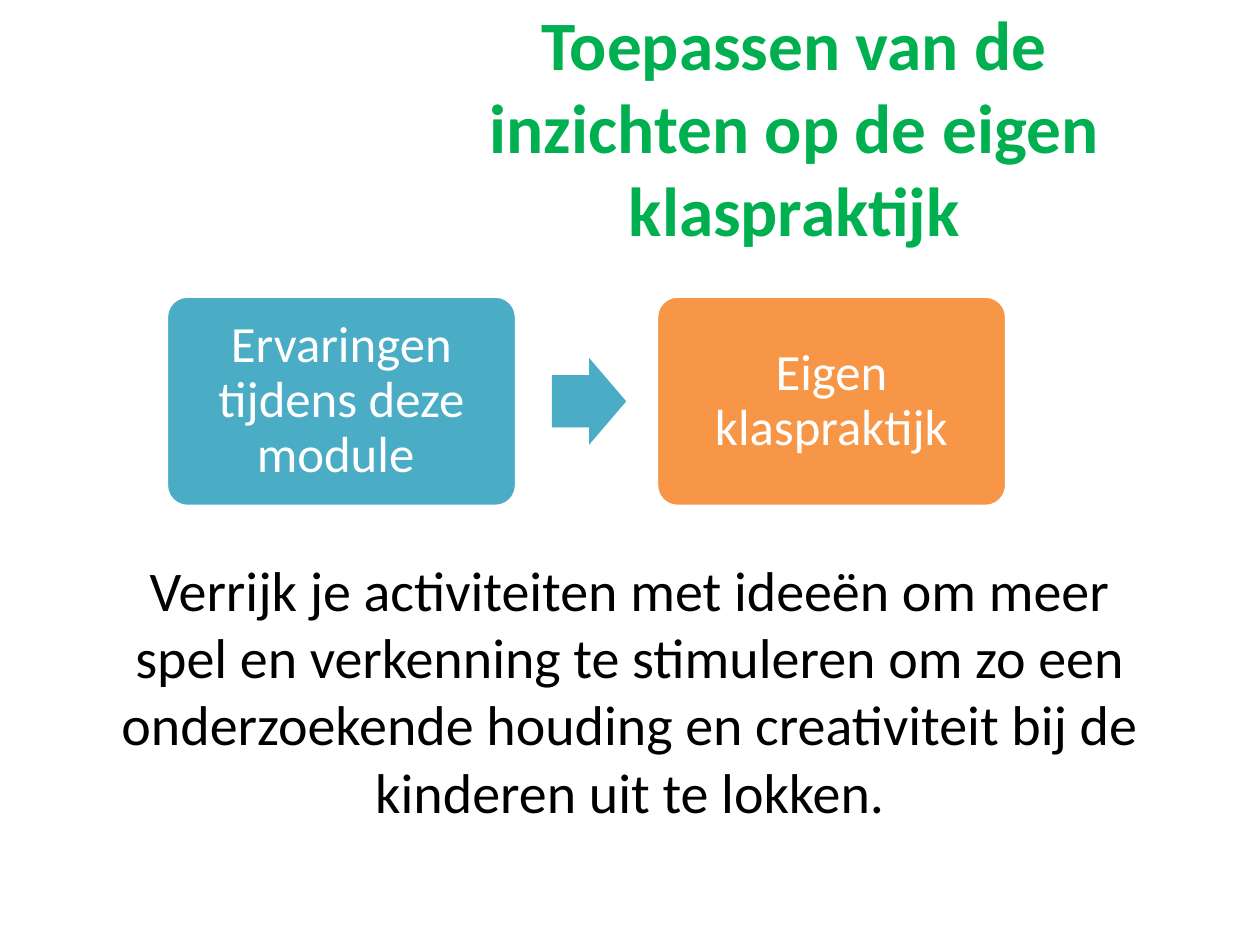
import pptx
import pptx.util
import pptx.dml.color
import pptx.enum.shapes
import pptx.enum.text

Inches = pptx.util.Inches
Pt = pptx.util.Pt
MSO_SHAPE = pptx.enum.shapes.MSO_SHAPE
ANCHOR = pptx.enum.text.MSO_ANCHOR

TEAL, ORANGE, GREEN = "4BACC6", "F79646", "00B050"
WHITE, BLACK = "FFFFFF", "000000"


def rgb(color):
    return pptx.dml.color.RGBColor.from_string(color)


def write(sp, text, size, color, anchor, bold=False):
    """Fill a shape with one centred, wrapped paragraph and return it."""
    tf = sp.text_frame
    tf.word_wrap = True
    tf.vertical_anchor = anchor
    p = tf.paragraphs[0]
    p.alignment = pptx.enum.text.PP_ALIGN.CENTER
    r = p.add_run()
    r.text = text
    r.font.name = "Calibri"
    r.font.size = Pt(size)
    r.font.bold = bold
    r.font.color.rgb = rgb(color)
    return p


prs = pptx.Presentation()
prs.slide_width, prs.slide_height = Inches(10), Inches(7.5)
s = prs.slides.add_slide(prs.slide_layouts[6])

title = s.shapes.add_textbox(Inches(3.11), Inches(0.3), Inches(6.39), Inches(1.4))
write(title, "Toepassen van de inzichten op de eigen klaspraktijk",
      39.6, GREEN, ANCHOR.MIDDLE, bold=True)

body = s.shapes.add_textbox(Inches(0.69), Inches(4.36), Inches(8.62), Inches(2.83))
write(body, "Verrijk je activiteiten met ideeën om meer spel en verkenning te "
      "stimuleren om zo een onderzoekende houding en creativiteit bij de "
      "kinderen uit te lokken.", 32, BLACK, ANCHOR.TOP)

# Process: two steps with an arrow between them
steps = [(1.32, TEAL, "Ervaringen tijdens deze module "),
         (5.21, ORANGE, "Eigen klaspraktijk")]
for left, color, text in steps:
    sp = s.shapes.add_shape(MSO_SHAPE.ROUNDED_RECTANGLE, Inches(left), Inches(2.35),
                            Inches(2.78), Inches(1.67))
    sp.adjustments[0] = 0.1
    sp.shadow.inherit = False
    sp.fill.solid()
    sp.fill.fore_color.rgb = rgb(color)
    sp.line.color.rgb = rgb(WHITE)
    sp.line.width = Pt(2)
    tf = sp.text_frame
    tf.margin_left = tf.margin_right = tf.margin_top = tf.margin_bottom = Inches(0.12)
    p = write(sp, text, 29, WHITE, ANCHOR.MIDDLE)
    p.line_spacing = 0.9

arrow = s.shapes.add_shape(MSO_SHAPE.RIGHT_ARROW, Inches(4.38), Inches(2.84),
                           Inches(0.59), Inches(0.69))
arrow.adjustments[0] = 0.6
arrow.adjustments[1] = 0.5
arrow.shadow.inherit = False
arrow.fill.solid()
arrow.fill.fore_color.rgb = rgb(TEAL)
arrow.line.fill.background()

prs.save("out.pptx")
